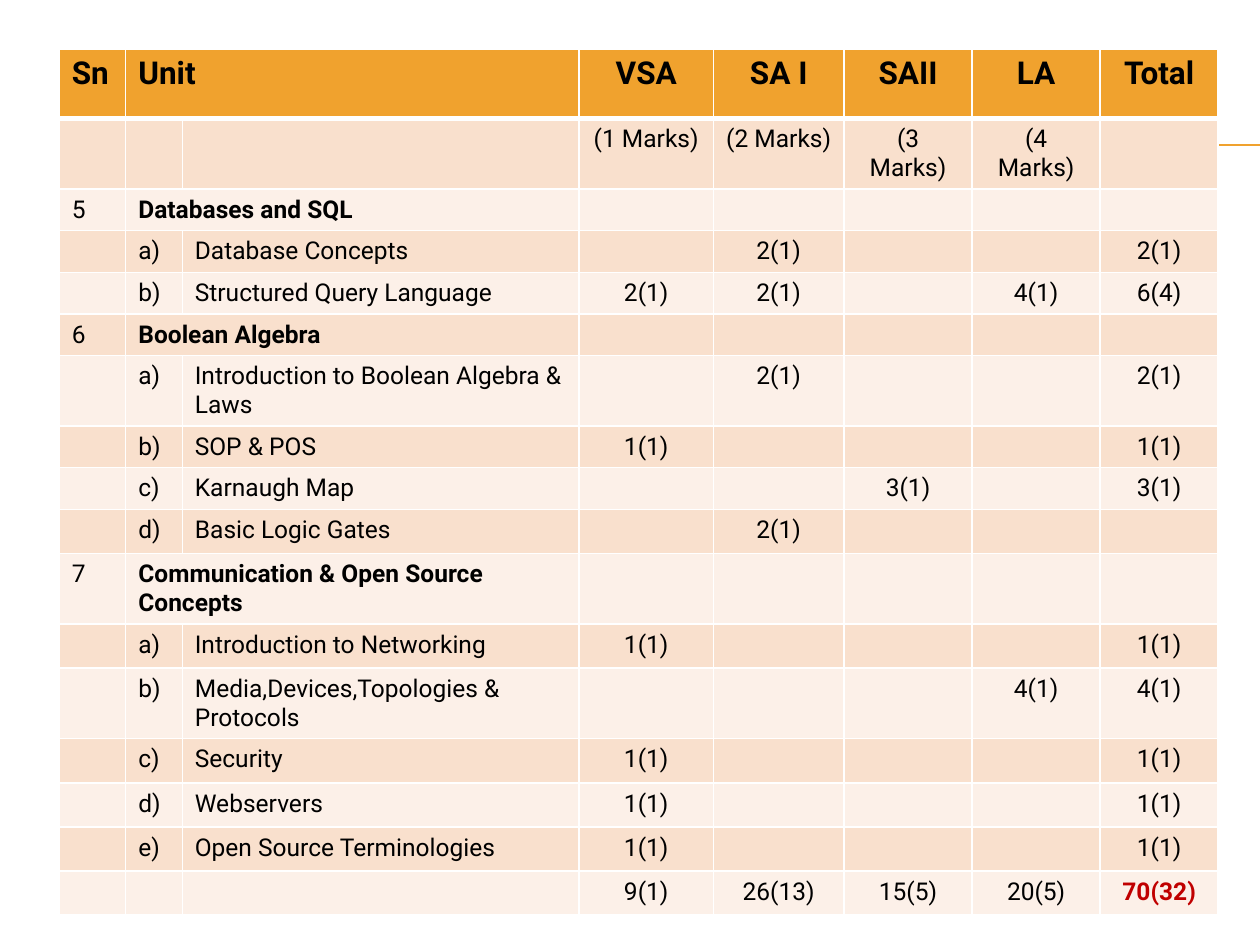
import pptx
import pptx.dml.color
import pptx.enum.shapes
import pptx.enum.text
import pptx.oxml
import pptx.oxml.ns
import pptx.util
import lxml.etree

WIDE, HIGH = pptx.util.Inches(10), pptx.util.Inches(7.5)
HUES = {"head": "F0A22E", "dark": "F9E0CD", "pale": "FCF0E8",
        "edge": "FFFFFF", "text": "000000", "sum": "C00000"}

# Shares of the slide: left, top, width, height
GRID = (0.047, 0.052, 0.92, 0.916)
RULES = (0.056, 0.153, 0.944, 0.001)

# Relative widths and heights within the table
COLS = [0.53, 0.45, 3.16, 1.07, 1.04, 1.02, 1.02, 0.94]
LOW, MID, TALL = 0.33, 0.35, 0.56
ROWS = [(0.55, "Sn", "Unit", "", "VSA", "SA I", "SAII", "LA", "Total"),
        (TALL, "", "", "", "(1 Marks)", "(2 Marks)", "(3 Marks)", "(4 Marks)", ""),
        (LOW, "5", "Databases and SQL", "", "", "", "", "", ""),
        (LOW, "", "a)", "Database Concepts", "", "2(1)", "", "", "2(1)"),
        (LOW, "", "b)", "Structured Query Language", "2(1)", "2(1)", "", "4(1)", "6(4)"),
        (LOW, "6", "Boolean Algebra", "", "", "", "", "", ""),
        (TALL, "", "a)", "Introduction to Boolean Algebra & Laws", "", "2(1)", "", "", "2(1)"),
        (LOW, "", "b)", "SOP & POS", "1(1)", "", "", "", "1(1)"),
        (LOW, "", "c)", "Karnaugh Map", "", "", "3(1)", "", "3(1)"),
        (MID, "", "d)", "Basic Logic Gates", "", "2(1)", "", "", ""),
        (TALL, "7", "Communication & Open Source Concepts", "", "", "", "", "", ""),
        (MID, "", "a)", "Introduction to Networking", "1(1)", "", "", "", "1(1)"),
        (TALL, "", "b)", "Media,Devices,Topologies & Protocols", "", "", "", "4(1)", "4(1)"),
        (MID, "", "c)", "Security", "1(1)", "", "", "", "1(1)"),
        (MID, "", "d)", "Webservers", "1(1)", "", "", "", "1(1)"),
        (MID, "", "e)", "Open Source Terminologies", "1(1)", "", "", "", "1(1)"),
        (MID, "", "", "", "9(1)", "26(13)", "15(5)", "20(5)", "70(32)")]


def hue(name):
    return pptx.dml.color.RGBColor.from_string(HUES[name])


def scale(box):
    left, top, wide, high = box
    return int(left * WIDE), int(top * HIGH), int(wide * WIDE), int(high * HIGH)


def write(frame, text, size=14, bold=False, color="text", center=False):
    para = frame.paragraphs[0]
    if center:
        para.alignment = pptx.enum.text.PP_ALIGN.CENTER
    if not text:
        # An empty cell still needs a text size, or its row grows
        end = lxml.etree.SubElement(para._p, pptx.oxml.ns.qn("a:endParaRPr"))
        end.set("sz", str(size * 100))
        face = lxml.etree.SubElement(end, pptx.oxml.ns.qn("a:latin"))
        face.set("typeface", "Roboto")
        return
    run = para.add_run()
    run.text = text
    run.font.name = "Roboto"
    run.font.size = pptx.util.Pt(size)
    run.font.bold = bold
    run.font.color.rgb = hue(color)


def edge(cell, **widths):
    """Draw the cell's borders, each side given its width in points."""
    props = cell._tc.get_or_add_tcPr()
    for side in "LRTB":
        line = lxml.etree.SubElement(props, pptx.oxml.ns.qn(f"a:ln{side}"))
        line.set("w", str(pptx.util.Pt(widths.get(side, 1))))
        fill = lxml.etree.SubElement(line, pptx.oxml.ns.qn("a:solidFill"))
        tint = lxml.etree.SubElement(fill, pptx.oxml.ns.qn("a:srgbClr"))
        tint.set("val", HUES["edge"])


def draw_rules(slide, box):
    left, top, wide, high = scale(box)
    for y in (top, top + high):
        line = slide.shapes.add_connector(
            pptx.enum.shapes.MSO_CONNECTOR.STRAIGHT, left, y, left + wide, y)
        line.line.color.rgb = hue("head")
        line.line.width = pptx.util.Pt(0.75)
        lxml.etree.SubElement(line._element.spPr, pptx.oxml.ns.qn("a:effectLst"))


def draw_grid(slide, box):
    left, top, wide, high = scale(box)
    table = slide.shapes.add_table(
        len(ROWS), len(COLS), left, top, wide, high).table
    table.first_row = table.horz_banding = False
    for col, part in zip(table.columns, COLS):
        col.width = int(wide * part / sum(COLS))
    total = sum(row[0] for row in ROWS)
    for r, (part, *texts) in enumerate(ROWS):
        table.rows[r].height = int(high * part / total)
        head, unit = r == 0, bool(texts[0])
        if unit:
            table.cell(r, 1).merge(table.cell(r, 2))
        for c, text in enumerate(texts):
            cell = table.cell(r, c)
            edge(cell, T=3 if r == 1 else 1, B=3 if head else 1)
            cell.fill.solid()
            cell.fill.fore_color.rgb = hue(
                "head" if head else "dark" if r % 2 else "pale")
            last = r == len(ROWS) - 1 and c == len(COLS) - 1
            write(cell.text_frame, text, size=18 if head else 14,
                  bold=head or last or (unit and c == 1),
                  color="sum" if last else "text", center=c > 2)


def main():
    deck = pptx.Presentation()
    deck.slide_width, deck.slide_height = WIDE, HIGH
    slide = deck.slides.add_slide(deck.slide_layouts[6])
    draw_rules(slide, RULES)
    draw_grid(slide, GRID)
    deck.save("out.pptx")


if __name__ == "__main__":
    main()
